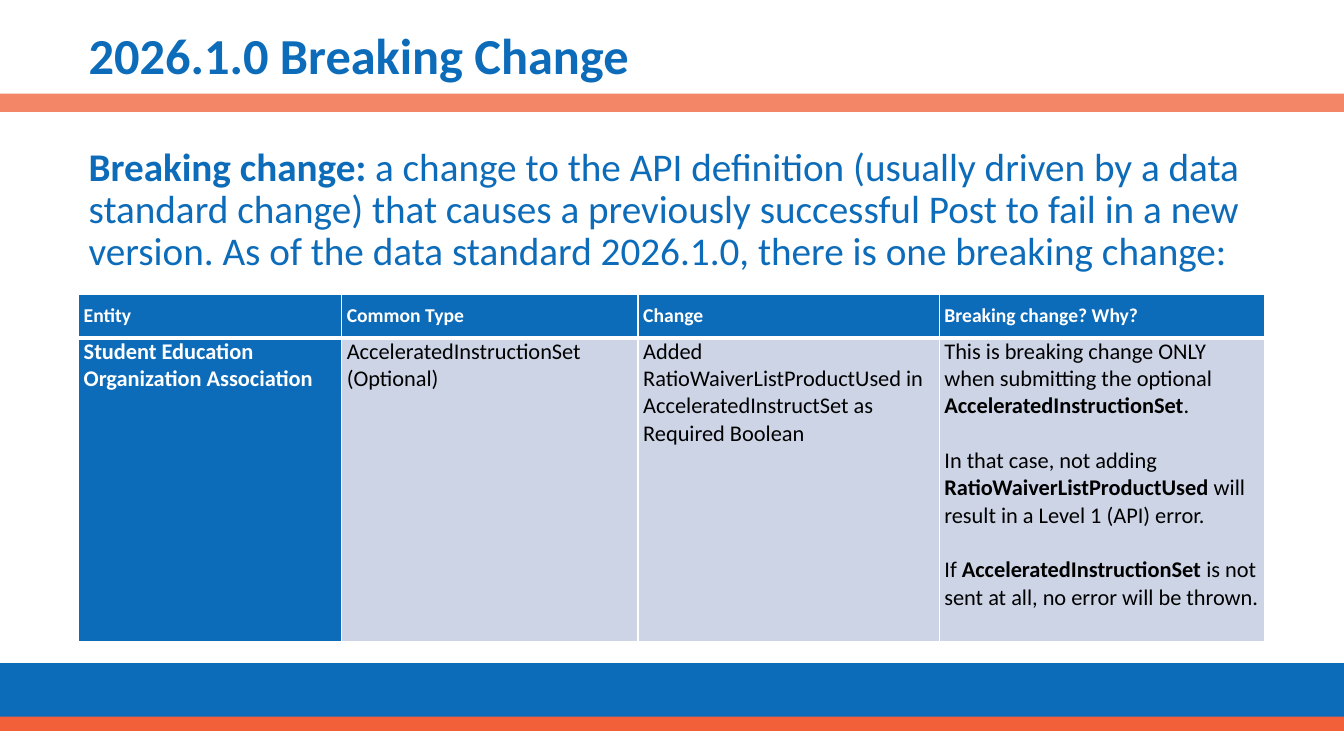
from lxml import etree
from pptx import Presentation
from pptx import util as u
from pptx.dml.color import RGBColor
from pptx.enum import shapes, text
from pptx.oxml.ns import qn

BLUE, WHITE, BLACK, PALE = "0D6CB9", "FFFFFF", "000000", "CCD4E6"
FONT = "Calibri"
SLIDE_WIDTH, SLIDE_HEIGHT = 33.87, 19.05
LEFT, TEXT_WIDTH = 1.98, 30.89

# Paragraphs are lists of (wording, bold) pieces.
TITLE = [[("2026.1.0 Breaking Change", True)]]
DEFINITION = [[
    ("Breaking change: ", True),
    ("a change to the API definition (usually driven by a data standard change) "
     "that causes a previously successful Post to fail in a new version. "
     "As of the data standard 2026.1.0, there is one breaking change:", False),
]]
HEADINGS = ["Entity", "Common Type", "Change", "Breaking change? Why?"]
ENTITY = [[("Student Education Organization Association", True)]]
DETAILS = [
    [[("AcceleratedInstructionSet (Optional)", False)]],
    [[("Added RatioWaiverListProductUsed in AcceleratedInstructSet "
       "as Required Boolean", False)]],
    [
        [("This is breaking change ONLY when submitting the optional ", False),
         ("AcceleratedInstructionSet", True), (".", False)],
        [("In that case, not adding ", False), ("RatioWaiverListProductUsed", True),
         (" will result in a Level 1 (API) error.", False)],
        [("If ", False), ("AcceleratedInstructionSet", True),
         (" is not sent at all, no error will be thrown.", False)],
    ],
]
COLUMN_WIDTHS = [6.63, 7.47, 7.59, 8.2]
ROW_HEIGHTS = [1.09, 7.65]
BANDS = [(16.71, 1.47, BLUE), (18.06, 0.36, "F16038"), (2.36, 0.46, "F48668")]


def rgb(value):
    return RGBColor.from_string(value)


def write(frame, paragraphs, size, color, gap=0, line_spacing=None):
    """Fill a text frame; gap is the space in points between paragraphs."""
    for index, pieces in enumerate(paragraphs):
        paragraph = frame.add_paragraph() if index else frame.paragraphs[0]
        paragraph.alignment = text.PP_ALIGN.LEFT
        paragraph.space_before = u.Pt(gap if index else 0)
        if line_spacing:
            paragraph.line_spacing = line_spacing
        for wording, bold in pieces:
            run = paragraph.add_run()
            run.text = wording
            run.font.name, run.font.size, run.font.bold = FONT, u.Pt(size), bold
            run.font.color.rgb = rgb(color)


def place(shape, top, height, anchor):
    shape.left, shape.top = u.Cm(LEFT), u.Cm(top)
    shape.width, shape.height = u.Cm(TEXT_WIDTH), u.Cm(height)
    frame = shape.text_frame
    frame.word_wrap = True
    frame.auto_size = text.MSO_AUTO_SIZE.NONE
    frame.vertical_anchor = anchor
    return frame


def add_band(slide, top, height, color):
    band = slide.shapes.add_shape(
        shapes.MSO_SHAPE.RECTANGLE, 0, u.Cm(top), u.Cm(SLIDE_WIDTH), u.Cm(height))
    band.shadow.inherit = False
    band.fill.solid()
    band.fill.fore_color.rgb = rgb(color)
    band.line.fill.background()


def add_border(cell, side, points):
    properties = cell._tc.get_or_add_tcPr()
    line = etree.SubElement(properties, qn("a:ln" + side), w=str(u.Pt(points)))
    fill = etree.SubElement(line, qn("a:solidFill"))
    etree.SubElement(fill, qn("a:srgbClr"), val=WHITE)


def format_cell(cell, row, fill):
    cell.margin_left = cell.margin_right = u.Cm(0.13)
    cell.margin_top = cell.margin_bottom = 0
    cell.vertical_anchor = text.MSO_ANCHOR.TOP if row else text.MSO_ANCHOR.MIDDLE
    divider = "T" if row else "B"
    for side in "LRTB":
        add_border(cell, side, 3 if side == divider else 1)
    cell.fill.solid()
    cell.fill.fore_color.rgb = rgb(fill)


def add_change_table(slide):
    table = slide.shapes.add_table(
        len(ROW_HEIGHTS), len(COLUMN_WIDTHS), u.Cm(LEFT), u.Cm(7.42),
        u.Cm(sum(COLUMN_WIDTHS)), u.Cm(sum(ROW_HEIGHTS))).table
    for column, width in zip(table.columns, COLUMN_WIDTHS):
        column.width = u.Cm(width)
    for row, height in zip(table.rows, ROW_HEIGHTS):
        row.height = u.Cm(height)
    contents = [[[[(heading, True)]] for heading in HEADINGS], [ENTITY] + DETAILS]
    for row, cells in enumerate(contents):
        for column, paragraphs in enumerate(cells):
            cell = table.cell(row, column)
            is_heading = row == 0 or column == 0
            format_cell(cell, row, BLUE if is_heading else PALE)
            write(cell.text_frame, paragraphs, 16 if row else 14,
                  WHITE if is_heading else BLACK, gap=19.5)


def main():
    presentation = Presentation()
    presentation.slide_width = u.Cm(SLIDE_WIDTH)
    presentation.slide_height = u.Cm(SLIDE_HEIGHT)
    slide = presentation.slides.add_slide(presentation.slide_layouts[1])

    title = place(slide.shapes.title, 0.43, 2.08, text.MSO_ANCHOR.MIDDLE)
    write(title, TITLE, 36, BLUE, line_spacing=0.9)

    body = place(slide.placeholders[1], 3.58, 12.88, text.MSO_ANCHOR.TOP)
    properties = body.paragraphs[0]._p.get_or_add_pPr()
    properties.set("marL", "0")
    properties.set("indent", "0")
    etree.SubElement(properties, qn("a:buNone"))
    write(body, DEFINITION, 28, BLUE, line_spacing=0.9)

    for top, height, color in BANDS:
        add_band(slide, top, height, color)
    add_change_table(slide)
    presentation.save("out.pptx")


if __name__ == "__main__":
    main()
